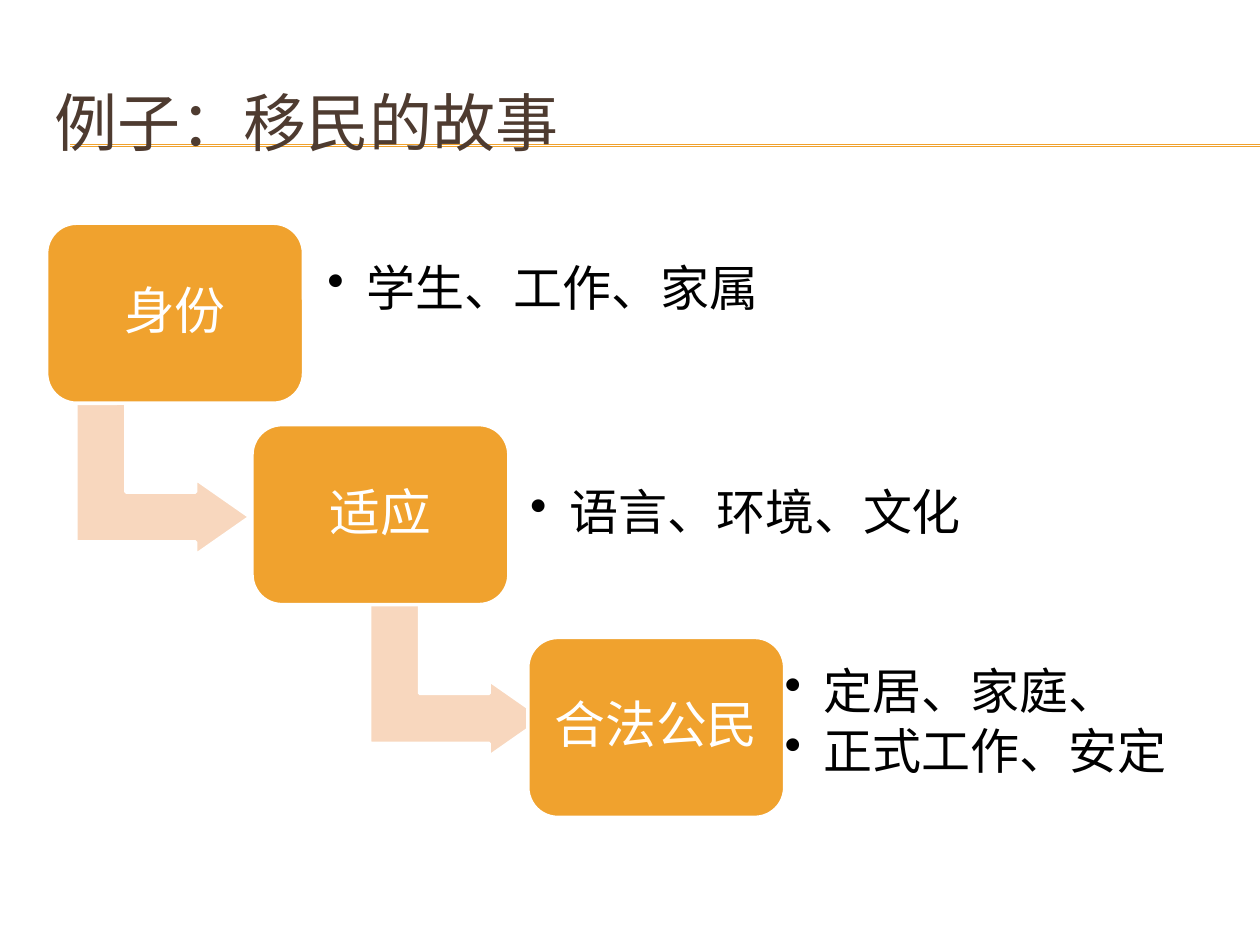
from pptx import Presentation
from pptx import util as u
from pptx.dml.color import RGBColor
from pptx.enum import shapes, text
from pptx.oxml.ns import qn
from lxml import etree

TITLE = "例子：移民的故事"

# Lengths in cm: box is (left, top), points_at is (left, top, width, height),
# arrow_left is the arrow that leads on to the next step
STEPS = [
    {"label": "身份", "box": (0.94, 4.5), "arrow_left": 1.75,
     "points": ["学生、工作、家属"], "points_at": (6.3, 4.39, 10.54, 2.92)},
    {"label": "适应", "box": (5.08, 8.56), "arrow_left": 7.67,
     "points": ["语言、环境、文化"], "points_at": (10.39, 8.81, 10.54, 3.12)},
    {"label": "合法公民", "box": (10.64, 12.85), "arrow_left": None,
     "points": ["定居、家庭、", "正式工作、安定"], "points_at": (15.52, 13.13, 8.61, 2.92)},
]

THEME = {
    "font": "Lato",
    "title": (36, "4E3B30"),
    "label": (29, "FFFFFF"),
    "point": (28, "000000"),
    "accent": "F0A22E",
    "arrow": "F8D7BE",
    "outline": "FFFFFF",
}

SLIDE_SIZE = (25.4, 19.05)
TITLE_AT = (0.84, 1.27, 24.13, 2.34)
RULE_LEFT, RULE_TOPS = 1.42, (2.92, 2.95)
BOX_SIZE = (5.18, 3.63)
ARROW_SIZE, ARROW_DROP = (3.07, 3.51), 3.4
INSET, BULLET_INDENT = 0.3, 0.79


def cm(*lengths):
    return [u.Cm(length) for length in lengths]


def color(name):
    return RGBColor.from_string(name)


def add_run(paragraph, words, style):
    size, ink = THEME[style]
    run = paragraph.add_run()
    run.text = words
    run.font.name = THEME["font"]
    run.font.size = u.Pt(size)
    run.font.color.rgb = color(ink)


def prepare_frame(shape):
    frame = shape.text_frame
    frame.word_wrap = True
    frame.vertical_anchor = text.MSO_ANCHOR.MIDDLE
    frame.margin_left = frame.margin_right = u.Cm(INSET)
    frame.margin_top = frame.margin_bottom = u.Cm(INSET)
    return frame


def add_filled(slide, kind, place, fill, adjustments):
    shape = slide.shapes.add_shape(kind, *cm(*place))
    shape.shadow.inherit = False
    shape.fill.solid()
    shape.fill.fore_color.rgb = color(fill)
    shape.line.color.rgb = color(THEME["outline"])
    shape.line.width = u.Pt(2)
    for index, value in enumerate(adjustments):
        shape.adjustments[index] = value
    return shape


def add_rule(slide, top):
    rule = slide.shapes.add_connector(
        shapes.MSO_CONNECTOR.STRAIGHT, *cm(RULE_LEFT, top, SLIDE_SIZE[0], top))
    rule.line.color.rgb = color(THEME["accent"])
    rule.line.width = u.Pt(0.75)
    etree.SubElement(rule._element.spPr, qn("a:effectLst"))


def add_title(slide):
    title = slide.shapes.title
    title.left, title.top, title.width, title.height = cm(*TITLE_AT)
    title.text_frame.vertical_anchor = text.MSO_ANCHOR.MIDDLE
    paragraph = title.text_frame.paragraphs[0]
    paragraph.alignment = text.PP_ALIGN.LEFT
    add_run(paragraph, TITLE, "title")
    slide.shapes._spTree.append(title._element)  # in front of the rules


def add_box(slide, step):
    box = add_filled(slide, shapes.MSO_SHAPE.ROUNDED_RECTANGLE,
                     (*step["box"], *BOX_SIZE), THEME["accent"], [0.167])
    paragraph = prepare_frame(box).paragraphs[0]
    paragraph.alignment = text.PP_ALIGN.CENTER
    paragraph.line_spacing = 0.9
    add_run(paragraph, step["label"], "label")


def add_arrow(slide, step):
    place = (step["arrow_left"], step["box"][1] + ARROW_DROP, *ARROW_SIZE)
    arrow = add_filled(slide, shapes.MSO_SHAPE.BENT_UP_ARROW, place,
                       THEME["arrow"], [0.328, 0.25, 0.358])
    arrow.rotation = 90


def add_points(slide, step):
    frame = prepare_frame(slide.shapes.add_textbox(*cm(*step["points_at"])))
    for index, words in enumerate(step["points"]):
        paragraph = frame.add_paragraph() if index else frame.paragraphs[0]
        paragraph.level = 1
        paragraph.line_spacing = 0.9
        paragraph.space_after = u.Pt(4)
        properties = paragraph._p.get_or_add_pPr()
        properties.set("marL", str(u.Cm(BULLET_INDENT)))
        properties.set("indent", str(-u.Cm(BULLET_INDENT)))
        etree.SubElement(properties, qn("a:buChar"), char="•")
        add_run(paragraph, words, "point")


def main():
    presentation = Presentation()
    presentation.slide_width, presentation.slide_height = cm(*SLIDE_SIZE)
    slide = presentation.slides.add_slide(presentation.slide_layouts[5])
    for top in RULE_TOPS:
        add_rule(slide, top)
    add_title(slide)
    for step in STEPS:
        if step["arrow_left"] is not None:
            add_arrow(slide, step)
        add_box(slide, step)
        add_points(slide, step)
    presentation.save("out.pptx")


if __name__ == "__main__":
    main()
